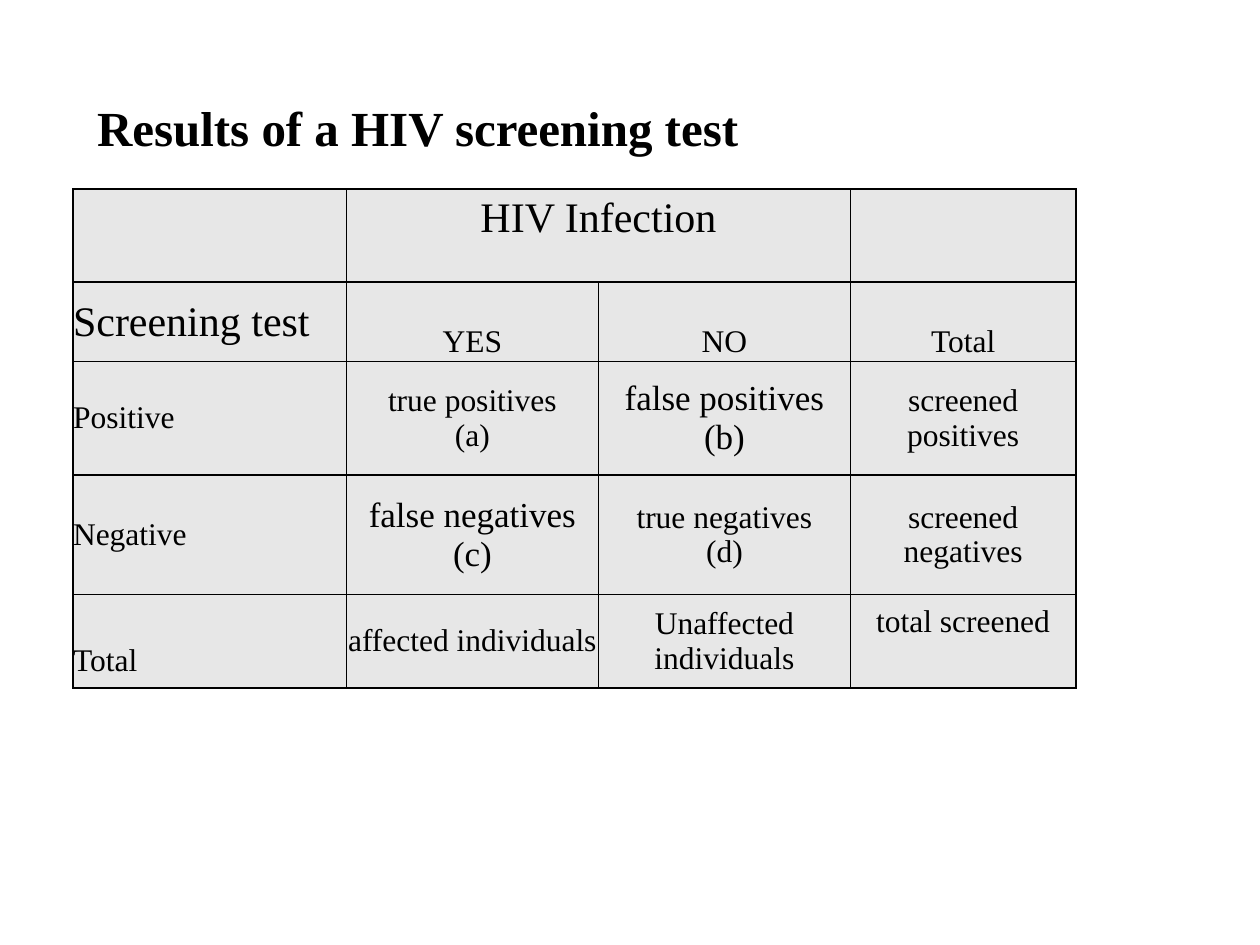
from dataclasses import dataclass

from lxml.etree import SubElement
from pptx import Presentation
from pptx.dml.color import RGBColor
from pptx.enum.text import MSO_ANCHOR, MSO_AUTO_SIZE, PP_ALIGN
from pptx.oxml.ns import qn
from pptx.util import Inches, Pt

FONT = "Times New Roman"
BLACK = "000000"
CELL_GREY = "E7E7E7"
COLUMN_WIDTHS = [2.17, 2, 2, 1.79]
ROW_HEIGHTS = [0.74, 0.63, 0.9, 0.95, 0.74]


@dataclass
class Entry:
    text: str = ""
    size: float = 18
    align: PP_ALIGN = PP_ALIGN.CENTER
    anchor: MSO_ANCHOR = MSO_ANCHOR.MIDDLE
    inset: float = 0  # top and bottom, inches


def row_label(text, size=18, **placing) -> Entry:
    return Entry(text, size, PP_ALIGN.LEFT, **placing)


def column_label(text) -> Entry:
    return Entry(text, anchor=MSO_ANCHOR.BOTTOM, inset=0.02)


RESULTS = [
    [Entry(), Entry("HIV Infection", 24, anchor=MSO_ANCHOR.TOP, inset=0.05),
     Entry(), Entry()],
    [row_label("Screening test", 24), column_label("YES"),
     column_label("NO"), column_label("Total")],
    [row_label("Positive"), Entry("true positives\n(a)"),
     Entry("false positives\n(b)", 20), Entry("screened positives")],
    [row_label("Negative"), Entry("false negatives\n(c)", 20),
     Entry("true negatives\n(d)"), Entry("screened negatives")],
    [row_label("Total", anchor=MSO_ANCHOR.BOTTOM, inset=0.08),
     Entry("affected individuals"), Entry("Unaffected individuals"),
     Entry("total screened", anchor=MSO_ANCHOR.TOP, inset=0.08)],
]


def color(value: str) -> RGBColor:
    return RGBColor.from_string(value)


def format_text(frame, size: float, align: PP_ALIGN, bold: bool = False) -> None:
    for paragraph in frame.paragraphs:
        paragraph.alignment = align
        paragraph.font.size = Pt(size)
        for run in paragraph.runs:
            run.font.name = FONT
            run.font.size = Pt(size)
            run.font.bold = bold
            run.font.color.rgb = color(BLACK)


def add_borders(cell, width: float = 1) -> None:
    properties = cell._tc.get_or_add_tcPr()
    for position, side in enumerate(("lnL", "lnR", "lnT", "lnB")):
        line = properties.makeelement(qn(f"a:{side}"), {"w": str(Pt(width))})
        fill = SubElement(line, qn("a:solidFill"))
        SubElement(fill, qn("a:srgbClr"), val=BLACK)
        properties.insert(position, line)


def fill_cell(cell, entry: Entry) -> None:
    cell.margin_left = cell.margin_right = 0
    cell.margin_top = cell.margin_bottom = Inches(entry.inset)
    cell.vertical_anchor = entry.anchor
    cell.text_frame.text = entry.text
    format_text(cell.text_frame, entry.size, entry.align)
    cell.fill.solid()
    cell.fill.fore_color.rgb = color(CELL_GREY)
    add_borders(cell)


def add_title(slide) -> None:
    title = slide.shapes.title
    title.left, title.top = Inches(0.58), Inches(0.58)
    title.width, title.height = Inches(8.83), Inches(0.67)
    frame = title.text_frame
    frame.text = "Results of a HIV screening test"
    frame.auto_size = MSO_AUTO_SIZE.NONE
    frame.vertical_anchor = MSO_ANCHOR.BOTTOM
    frame.margin_left = Inches(0.19)
    frame.margin_top = frame.margin_right = 0
    frame.margin_bottom = Inches(0.01)
    format_text(frame, 28, PP_ALIGN.LEFT, bold=True)


def add_results_table(slide) -> None:
    table = slide.shapes.add_table(
        len(ROW_HEIGHTS), len(COLUMN_WIDTHS), Inches(0.58), Inches(1.5),
        Inches(sum(COLUMN_WIDTHS)), Inches(sum(ROW_HEIGHTS))).table
    table.first_row = False
    table.horz_banding = False
    for column, width in zip(table.columns, COLUMN_WIDTHS):
        column.width = Inches(width)
    for row, height, entries in zip(table.rows, ROW_HEIGHTS, RESULTS):
        row.height = Inches(height)
        for cell, entry in zip(row.cells, entries):
            fill_cell(cell, entry)
    # HIV Infection heads both the YES and NO columns
    table.cell(0, 1).merge(table.cell(0, 2))


def main() -> None:
    presentation = Presentation()
    presentation.slide_width = Inches(10)
    presentation.slide_height = Inches(7.5)
    slide = presentation.slides.add_slide(presentation.slide_layouts[5])
    add_title(slide)
    add_results_table(slide)
    presentation.save("out.pptx")


if __name__ == "__main__":
    main()
